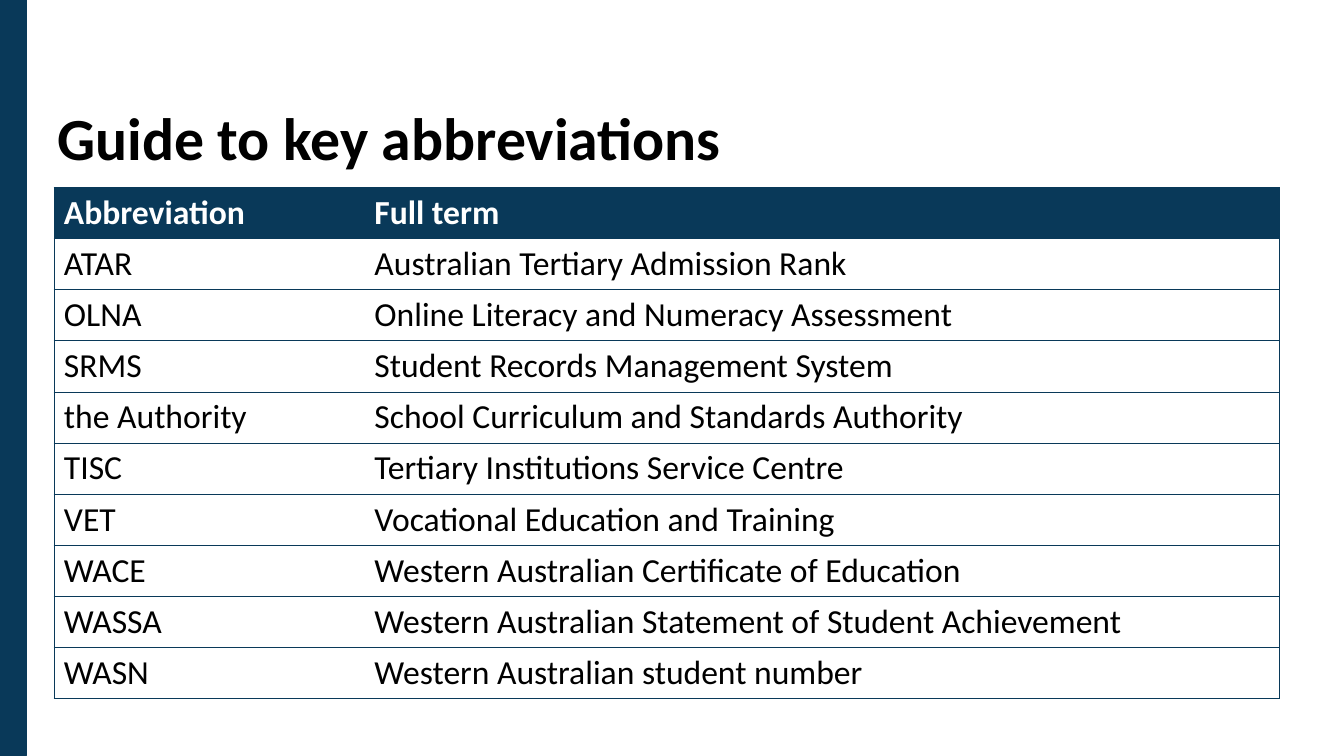
from dataclasses import dataclass

from lxml import etree
from pptx import Presentation
from pptx.dml.color import RGBColor
from pptx.enum.shapes import MSO_SHAPE
from pptx.enum.text import MSO_ANCHOR
from pptx.oxml.ns import qn
from pptx.slide import Slide
from pptx.table import _Cell
from pptx.text.text import _Paragraph
from pptx.util import Inches, Pt

RECTANGLE = MSO_SHAPE.RECTANGLE
MIDDLE = MSO_ANCHOR.MIDDLE
SLIDE_WIDTH = Inches(13.33)
SLIDE_HEIGHT = Inches(7.5)
COLOURS = {"navy": "093959", "white": "FFFFFF", "black": "000000"}
TITLE_FORMAT = {"name": "Calibri", "size": Pt(42.7), "bold": True}
HEADER_FORMAT = {"name": "Calibri", "size": Pt(24), "bold": True}
BODY_FORMAT = {"name": "Calibri", "size": Pt(24), "bold": False}
COLUMN_SHARES = (23.1, 68.05)
ROW_SHARE = 6.67
RULE_WIDTH = Pt(0.5)


@dataclass(frozen=True)
class Area:
    """A rectangle given in percent of the slide's width and height."""

    left: float
    top: float
    width: float
    height: float

    def lengths(self) -> tuple[int, int, int, int]:
        """Return left, top, width and height as slide lengths."""
        return across(self.left), down(self.top), across(self.width), down(self.height)


@dataclass(frozen=True)
class Entry:
    """One abbreviation with its full term."""

    abbreviation: str
    term: str


ENTRIES = (
    Entry("Abbreviation", "Full term"),
    Entry("ATAR", "Australian Tertiary Admission Rank"),
    Entry("OLNA", "Online Literacy and Numeracy Assessment"),
    Entry("SRMS", "Student Records Management System"),
    Entry("the Authority", "School Curriculum and Standards Authority"),
    Entry("TISC", "Tertiary Institutions Service Centre"),
    Entry("VET", "Vocational Education and Training"),
    Entry("WACE", "Western Australian Certificate of Education"),
    Entry("WASSA", "Western Australian Statement of Student Achievement"),
    Entry("WASN", "Western Australian student number"),
)
SIDE_BAR = Area(0, 0, 1.95, 100)
TITLE = Area(3.53, 14.53, 94.22, 8.27)
TABLE = Area(4.01, 24.8, sum(COLUMN_SHARES), ROW_SHARE * len(ENTRIES))


def across(percent: float) -> int:
    """Turn a percentage of the slide's width into a length."""
    return round(SLIDE_WIDTH * percent / 100)


def down(percent: float) -> int:
    """Turn a percentage of the slide's height into a length."""
    return round(SLIDE_HEIGHT * percent / 100)


def colour(name: str) -> RGBColor:
    """Look up a named colour."""
    return RGBColor.from_string(COLOURS[name])


def write(paragraph: _Paragraph, text: str, text_format: dict, colour_name: str) -> None:
    """Put formatted text into a paragraph."""
    run = paragraph.add_run()
    run.text = text
    for attribute, value in text_format.items():
        setattr(run.font, attribute, value)
    run.font.color.rgb = colour(colour_name)


def rule_cell(cell: _Cell, ruled_sides: str) -> None:
    """Draw the named sides of a cell and clear the others."""
    properties = cell._tc.get_or_add_tcPr()
    for side in "LRTB":
        line = etree.SubElement(properties, qn(f"a:ln{side}"), w=str(RULE_WIDTH))
        if side in ruled_sides:
            fill = etree.SubElement(line, qn("a:solidFill"))
            etree.SubElement(fill, qn("a:srgbClr"), val=COLOURS["navy"])
        else:
            etree.SubElement(line, qn("a:noFill"))


def add_side_bar(slide: Slide) -> None:
    """Add the band along the left edge."""
    shape = slide.shapes.add_shape(RECTANGLE, *SIDE_BAR.lengths())
    shape.shadow.inherit = False
    shape.fill.solid()
    shape.fill.fore_color.rgb = colour("navy")
    shape.line.color.rgb = colour("navy")
    shape.line.width = Pt(0.75)


def add_title(slide: Slide) -> None:
    """Add the slide's heading."""
    frame = slide.shapes.add_textbox(*TITLE.lengths()).text_frame
    frame.word_wrap = True
    frame.vertical_anchor = MIDDLE
    paragraph = frame.paragraphs[0]
    paragraph.line_spacing = 0.9
    write(paragraph, "Guide to key abbreviations", TITLE_FORMAT, "black")


def add_abbreviations(slide: Slide) -> None:
    """Add the table of abbreviations."""
    size = len(ENTRIES), len(COLUMN_SHARES)
    table = slide.shapes.add_table(*size, *TABLE.lengths()).table
    table.horz_banding = False
    for column, share in zip(table.columns, COLUMN_SHARES):
        column.width = across(share)
    for row_index, entry in enumerate(ENTRIES):
        is_header = row_index == 0
        text_format = HEADER_FORMAT if is_header else BODY_FORMAT
        text_colour = "white" if is_header else "black"
        texts = entry.abbreviation, entry.term
        for cell, text, outer_side in zip(table.rows[row_index].cells, texts, "LR"):
            rule_cell(cell, outer_side + "TB")
            cell.fill.solid()
            cell.fill.fore_color.rgb = colour("navy" if is_header else "white")
            write(cell.text_frame.paragraphs[0], text, text_format, text_colour)


def main() -> None:
    """Build and save the presentation."""
    presentation = Presentation()
    presentation.slide_width = SLIDE_WIDTH
    presentation.slide_height = SLIDE_HEIGHT
    slide = presentation.slides.add_slide(presentation.slide_layouts[6])
    add_side_bar(slide)
    add_abbreviations(slide)
    add_title(slide)
    presentation.save("out.pptx")


if __name__ == "__main__":
    main()
